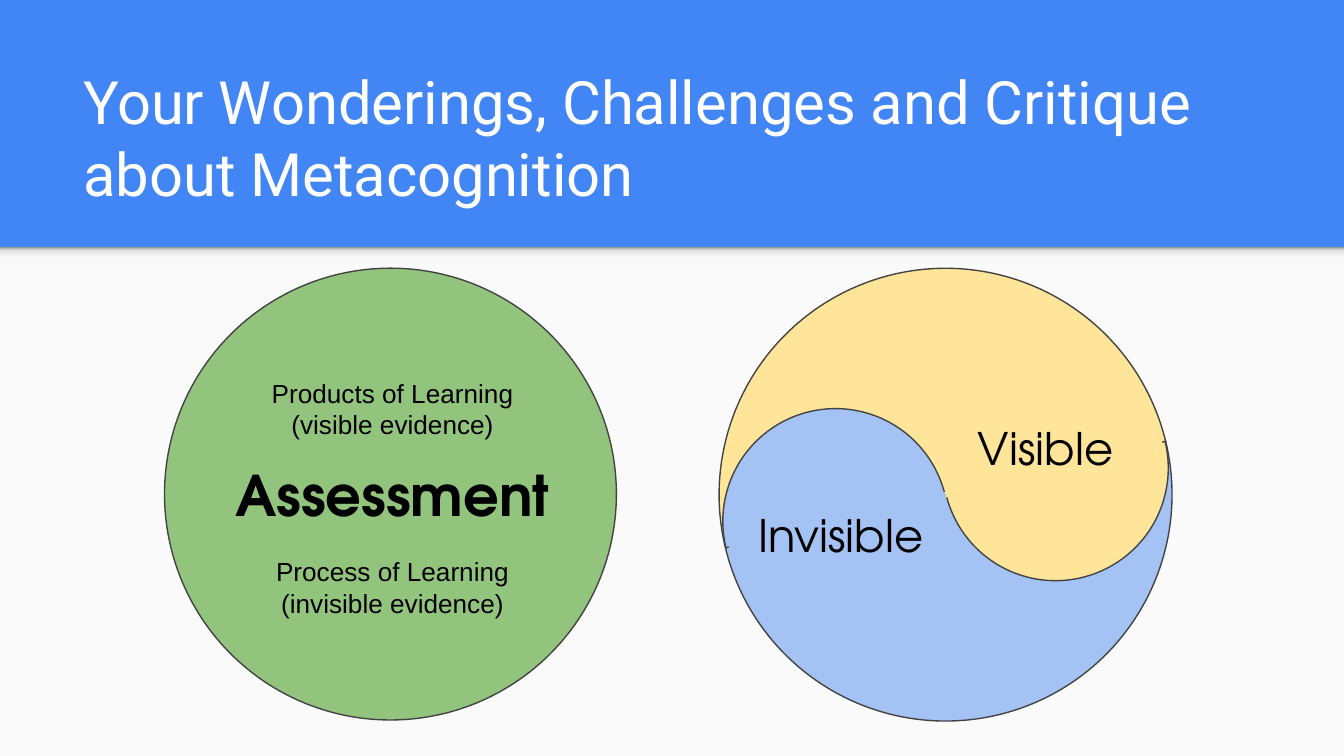
from copy import deepcopy
from math import cos, radians, sin

from pptx import Presentation
from pptx.dml.color import RGBColor
from pptx.enum.shapes import MSO_CONNECTOR, MSO_SHAPE
from pptx.enum.text import MSO_ANCHOR, PP_ALIGN
from pptx.oxml.ns import qn
from pptx.util import Cm, Pt

RECT, PIE, OVAL = MSO_SHAPE.RECTANGLE, MSO_SHAPE.PIE, MSO_SHAPE.OVAL
STRAIGHT = MSO_CONNECTOR.STRAIGHT
LEFT, CENTER = PP_ALIGN.LEFT, PP_ALIGN.CENTER
TOP, MIDDLE, BOTTOM = MSO_ANCHOR.TOP, MSO_ANCHOR.MIDDLE, MSO_ANCHOR.BOTTOM

BLUE = RGBColor(0x42, 0x85, 0xF4)
PAPER = RGBColor(0xFA, 0xFA, 0xFA)
WHITE = RGBColor(0xFF, 0xFF, 0xFF)
BLACK = RGBColor(0, 0, 0)
OUTLINE = RGBColor(0x42, 0x42, 0x42)
GREEN = RGBColor(0x93, 0xC4, 0x7D)
YELLOW = RGBColor(0xFF, 0xE5, 0x99)
PALE_BLUE = RGBColor(0xA4, 0xC2, 0xF4)
SHADE = [(0, RGBColor(0xF9, 0xF9, 0xF9)), (0.36, RGBColor(0xF9, 0xF9, 0xF9)),
         (0.8, RGBColor(0xDE, 0xDE, 0xDE)), (1, RGBColor(0x99, 0x99, 0x99))]

DISPLAY = "TeX Gyre Adventor"
WIDTH, HEIGHT = 25.4, 14.29
HEADER_H = 4.67
TILT = 13.6  # degrees the dividing line rises to the right


def add_text(shapes, text, x, y, w, h, font="Arial", size=14, color=BLACK,
             bold=False, align=CENTER, anchor=MIDDLE):
    """Text box with one paragraph per line of text."""
    tf = shapes.add_textbox(Cm(x), Cm(y), Cm(w), Cm(h)).text_frame
    tf.word_wrap = True
    tf.vertical_anchor = anchor
    tf.margin_left = tf.margin_right = tf.margin_top = tf.margin_bottom = Cm(0.25)
    for i, line in enumerate(text.split("\n")):
        p = tf.paragraphs[0] if i == 0 else tf.add_paragraph()
        p.alignment = align
        r = p.add_run()
        r.text = line
        r.font.name, r.font.size, r.font.bold = font, Pt(size), bold
        r.font.color.rgb = color


def add_filled(shapes, kind, x, y, w, h, color, outline=None):
    s = shapes.add_shape(kind, Cm(x), Cm(y), Cm(w), Cm(h))
    s.shadow.inherit = False
    s.fill.solid()
    s.fill.fore_color.rgb = color
    if outline is None:
        s.line.fill.background()
    else:
        s.line.color.rgb = outline
        s.line.width = Pt(0.75)
    return s


def add_half_disc(shapes, cx, cy, radius, color, rotation):
    s = add_filled(shapes, PIE, cx - radius, cy - radius, 2 * radius, 2 * radius,
                   color, OUTLINE)
    s.adjustments[0], s.adjustments[1] = 0, 108  # 0 to 180 degrees
    s.rotation = rotation


def add_seam(shapes, x1, y1, x2, y2, color):
    """Thick line that hides the straight edge between two half discs."""
    s = shapes.add_connector(STRAIGHT, Cm(x1), Cm(y1), Cm(x2), Cm(y2))
    s.line.color.rgb = color
    s.line.width = Pt(3)
    sp_pr = s._element.spPr
    sp_pr.append(sp_pr.makeelement(qn("a:effectLst"), {}))


def add_header(slide, x, y, w, h):
    """Blue band with the title, above a pale body with a soft shade."""
    slide.background.fill.solid()
    slide.background.fill.fore_color.rgb = BLUE
    add_filled(slide.shapes, RECT, x, y + h, w, HEIGHT - h, PAPER)

    # Shade under the band
    s = add_filled(slide.shapes, RECT, x, y + h, w, 0.3, PAPER)
    s.fill.gradient()
    s.fill.gradient_angle = 90
    stops = s._element.spPr.find(".//" + qn("a:gsLst"))
    for _ in range(len(SHADE) - len(stops)):
        stops.append(deepcopy(stops[-1]))
    for stop, (position, color) in zip(s.fill.gradient_stops, SHADE):
        stop.position = position
        stop.color.rgb = color

    add_text(slide.shapes, "Your Wonderings, Challenges and Critique about Metacognition",
             x + 1.32, y + h - 2.61, 22.83, 2.13, font="Roboto", size=32,
             color=WHITE, align=LEFT, anchor=BOTTOM)


def add_assessment_disc(slide, x, y, d):
    shapes = slide.shapes.add_group_shape().shapes
    add_filled(shapes, OVAL, x, y, d, d, GREEN, OUTLINE)
    cx, cy = x + d / 2, y + d / 2
    for text, dy, w, h, fmt in [
            ("Assessment", 0, 6.76, 1.47, dict(font=DISPLAY, size=30, bold=True)),
            ("Process of Learning\n(invisible evidence)", 1.76, 5.66, 1.7, {}),
            ("Products of Learning\n(visible evidence)", -1.62, 7.16, 1.7, {})]:
        add_text(shapes, text, cx - w / 2 + 0.04, cy + dy - h / 2, w, h, **fmt)


def add_visibility_disc(slide, x, y, d):
    shapes = slide.shapes.add_group_shape().shapes
    big, small = d / 2, d / 4
    cx, cy = x + big, y + big
    dx, dy = small * cos(radians(TILT)), small * sin(radians(TILT))
    upper, lower = 180 - TILT, 360 - TILT

    # Large halves, then the small halves that make the wave
    add_half_disc(shapes, cx, cy, big, YELLOW, upper)
    add_half_disc(shapes, cx, cy, big, PALE_BLUE, lower)
    add_half_disc(shapes, cx + dx, cy - dy, small - 0.01, YELLOW, lower)
    add_half_disc(shapes, cx - dx, cy + dy, small - 0.01, PALE_BLUE, upper)

    # Seams stop just inside the rim
    reach = 1.97
    add_seam(shapes, cx - reach * dx, cy + reach * dy, cx, cy, PALE_BLUE)
    add_seam(shapes, cx, cy, cx + reach * dx, cy - reach * dy, YELLOW)

    for text, left, top, w in [("Visible", -0.32, -1.64, 4.42),
                               ("Invisible", -4, 0, 4.04)]:
        add_text(shapes, text, cx + left, cy + top, w, 1.47,
                 font=DISPLAY, size=24, anchor=TOP)


def main():
    prs = Presentation()
    prs.slide_width, prs.slide_height = Cm(WIDTH), Cm(HEIGHT)
    slide = prs.slides.add_slide(prs.slide_layouts[6])
    add_header(slide, 0, 0, WIDTH, HEADER_H)
    add_visibility_disc(slide, 13.59, 5.07, 8.56)
    add_assessment_disc(slide, 3.11, 5.07, 8.54)
    prs.save("out.pptx")


if __name__ == "__main__":
    main()
